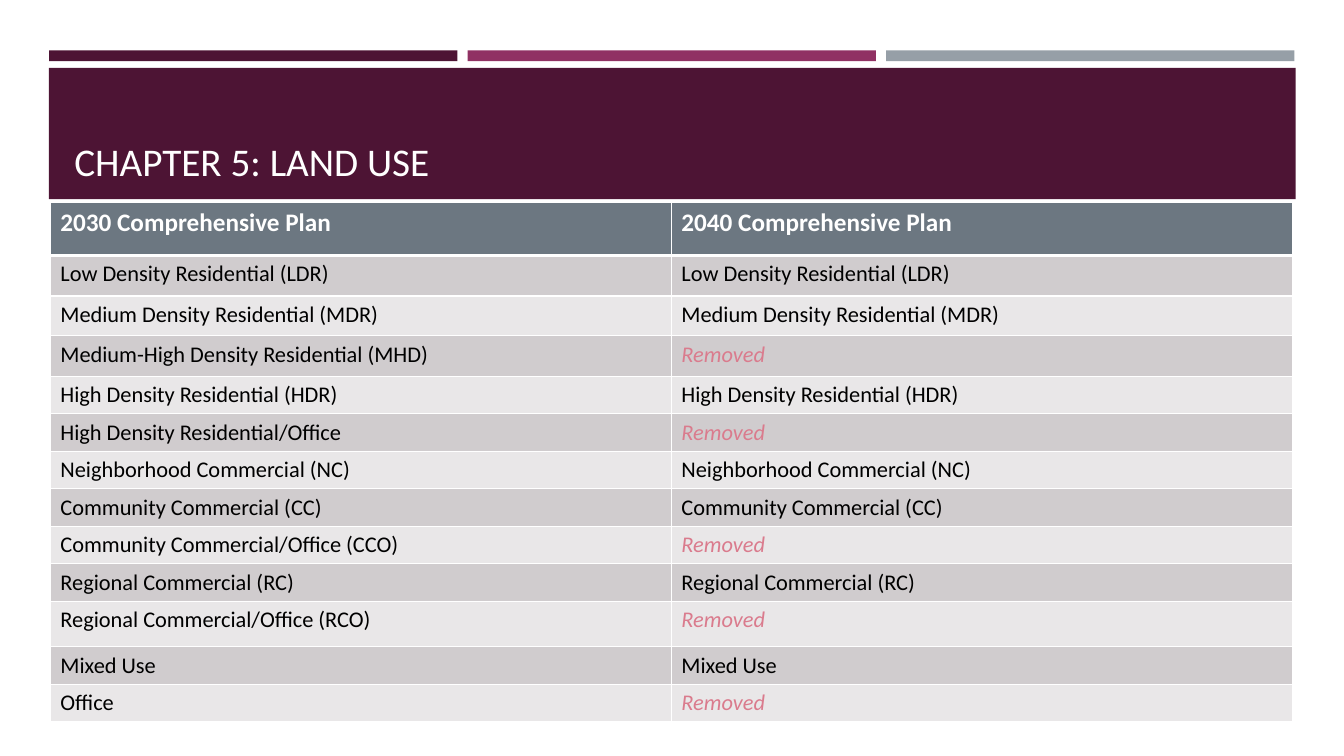
from lxml import etree
from pptx import Presentation
from pptx.dml.color import RGBColor
from pptx.enum import shapes, text
from pptx.oxml import ns
from pptx.util import Cm, Pt

FONT = "Calibri"
PLUM = RGBColor(0x4D, 0x14, 0x34)
MAGENTA = RGBColor(0x90, 0x31, 0x63)
GREY = RGBColor(0x96, 0x9F, 0xA7)
SLATE = RGBColor(0x6C, 0x77, 0x81)
DARK_ROW = RGBColor(0xD0, 0xCC, 0xCE)
LIGHT_ROW = RGBColor(0xE9, 0xE7, 0xE8)
ROSE = RGBColor(0xDA, 0x7B, 0x8D)
WHITE = RGBColor(0xFF, 0xFF, 0xFF)
BLACK = RGBColor(0, 0, 0)

REMOVED = "Removed"
HEADINGS = ("2030 Comprehensive Plan", "2040 Comprehensive Plan")
# Land use category, whether the 2040 plan keeps it, row height in cm
LAND_USES = [
    ("Low Density Residential (LDR)", True, 1.02),
    ("Medium Density Residential (MDR)", True, 1.0),
    ("Medium-High Density Residential (MHD)", False, 1.02),
    ("High Density Residential (HDR)", True, 0.94),
    ("High Density Residential/Office", False, 0.94),
    ("Neighborhood Commercial (NC)", True, 0.94),
    ("Community Commercial (CC)", True, 0.94),
    ("Community Commercial/Office (CCO)", False, 0.94),
    ("Regional Commercial (RC)", True, 0.94),
    ("Regional Commercial/Office (RCO)", False, 1.15),
    ("Mixed Use", True, 0.94),
    ("Office", False, 0.94),
]
HEADER_HEIGHT = 1.33


def add_run(paragraph, wording, size, color, bold=False, italic=False):
    run = paragraph.add_run()
    run.text = wording
    run.font.name = FONT
    run.font.size = Pt(size)
    run.font.color.rgb = color
    run.font.bold = bold
    run.font.italic = italic


def add_bar(slide, left, top, width, height, color):
    bar = slide.shapes.add_shape(
        shapes.MSO_SHAPE.RECTANGLE, Cm(left), Cm(top), Cm(width), Cm(height))
    bar.shadow.inherit = False
    bar.fill.solid()
    bar.fill.fore_color.rgb = color
    bar.line.fill.background()


def add_accent_bars(slide, left, top, width, height):
    gap = 0.26
    bar_width = (width - 2 * gap) / 3
    for index, color in enumerate((PLUM, MAGENTA, GREY)):
        add_bar(slide, left + index * (bar_width + gap), top, bar_width, height, color)


def add_title_band(slide, left, top, width, height):
    add_bar(slide, left, top, width, height, PLUM)
    title = slide.shapes.title
    title.left, title.top = Cm(left + 0.39), Cm(top + 0.25)
    title.width, title.height = Cm(width - 0.78), Cm(height - 0.49)
    frame = title.text_frame
    frame.word_wrap = True
    frame.auto_size = text.MSO_AUTO_SIZE.NONE
    frame.vertical_anchor = text.MSO_ANCHOR.BOTTOM
    paragraph = frame.paragraphs[0]
    paragraph.alignment = text.PP_ALIGN.LEFT
    add_run(paragraph, "CHAPTER 5: LAND USE", 28, WHITE)
    # The title placeholder has to lie in front of the band
    title.element.getparent().append(title.element)


def set_borders(cell, top, bottom):
    """Give the cell white borders; top and bottom are widths in points."""
    properties = cell._tc.get_or_add_tcPr()
    for side, width in (("L", 1), ("R", 1), ("T", top), ("B", bottom)):
        line = etree.SubElement(properties, ns.qn(f"a:ln{side}"), w=str(Pt(width)))
        fill = etree.SubElement(line, ns.qn("a:solidFill"))
        etree.SubElement(fill, ns.qn("a:srgbClr"), val=str(WHITE))


def fill_cell(cell, wording, row):
    set_borders(cell, top=3 if row == 1 else 1, bottom=3 if row == 0 else 1)
    cell.fill.solid()
    paragraph = cell.text_frame.paragraphs[0]
    if row == 0:
        cell.fill.fore_color.rgb = SLATE
        add_run(paragraph, wording, 18, WHITE, bold=True)
        return
    cell.fill.fore_color.rgb = DARK_ROW if row % 2 else LIGHT_ROW
    removed = wording == REMOVED
    add_run(paragraph, wording, 16, ROSE if removed else BLACK, italic=removed)


def add_land_use_table(slide, left, top, width):
    rows = [HEADINGS] + [(use, use if kept else REMOVED) for use, kept, _ in LAND_USES]
    heights = [HEADER_HEIGHT] + [height for _, _, height in LAND_USES]
    table = slide.shapes.add_table(
        len(rows), len(HEADINGS), Cm(left), Cm(top), Cm(width), Cm(sum(heights))).table
    for column in table.columns:
        column.width = Cm(width / len(HEADINGS))
    for row, (wordings, height) in enumerate(zip(rows, heights)):
        table.rows[row].height = Cm(height)
        for column, wording in enumerate(wordings):
            fill_cell(table.cell(row, column), wording, row)


def build_land_use_slide(presentation):
    title_only = presentation.slide_layouts[5]
    slide = presentation.slides.add_slide(title_only)
    add_accent_bars(slide, 1.24, 1.27, 31.38, 0.27)
    add_land_use_table(slide, 1.27, 5.11, 31.3)
    add_title_band(slide, 1.23, 1.71, 31.42, 3.31)


def main():
    presentation = Presentation()
    presentation.slide_width = Cm(33.87)
    presentation.slide_height = Cm(19.05)
    build_land_use_slide(presentation)
    presentation.save("out.pptx")


if __name__ == "__main__":
    main()
